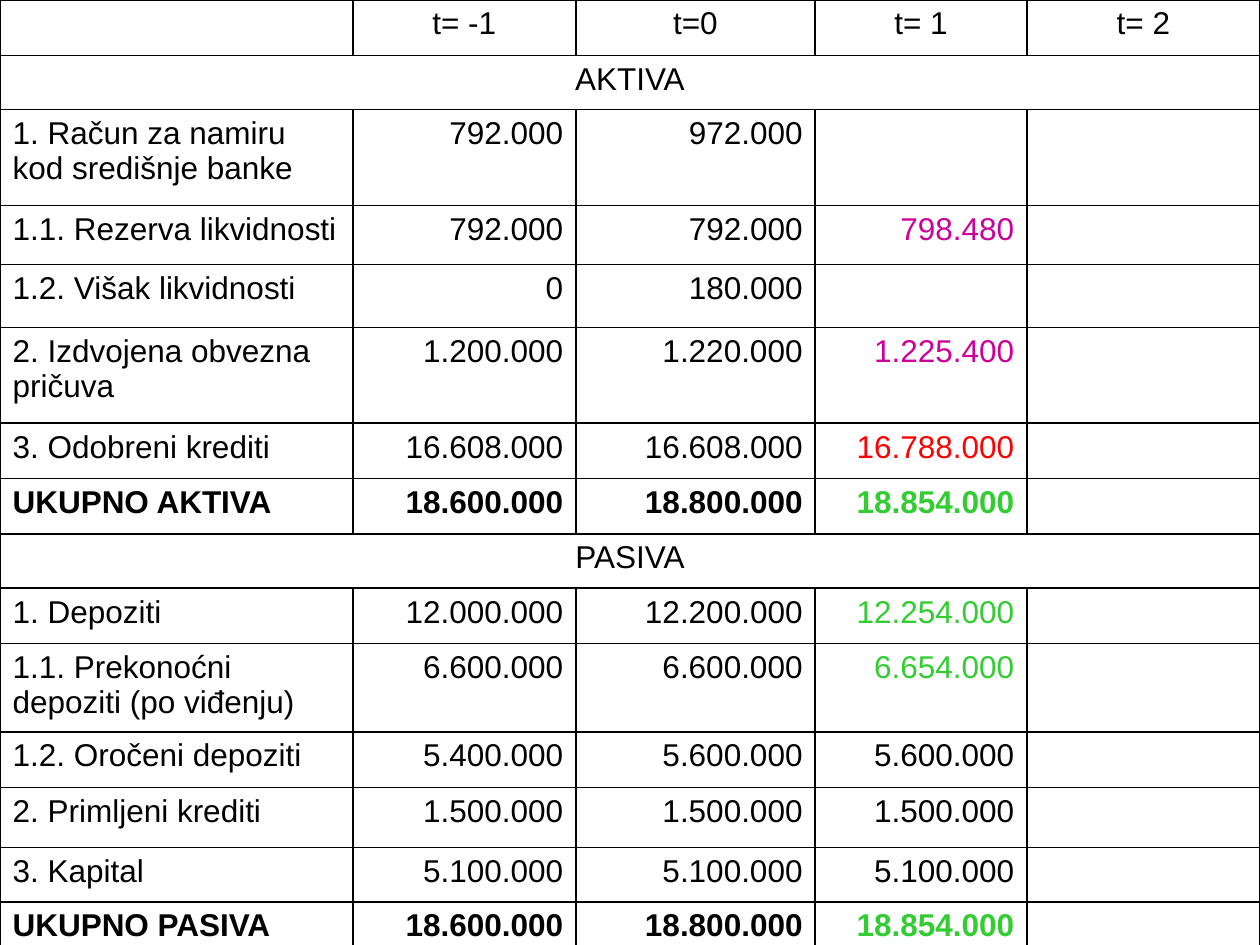
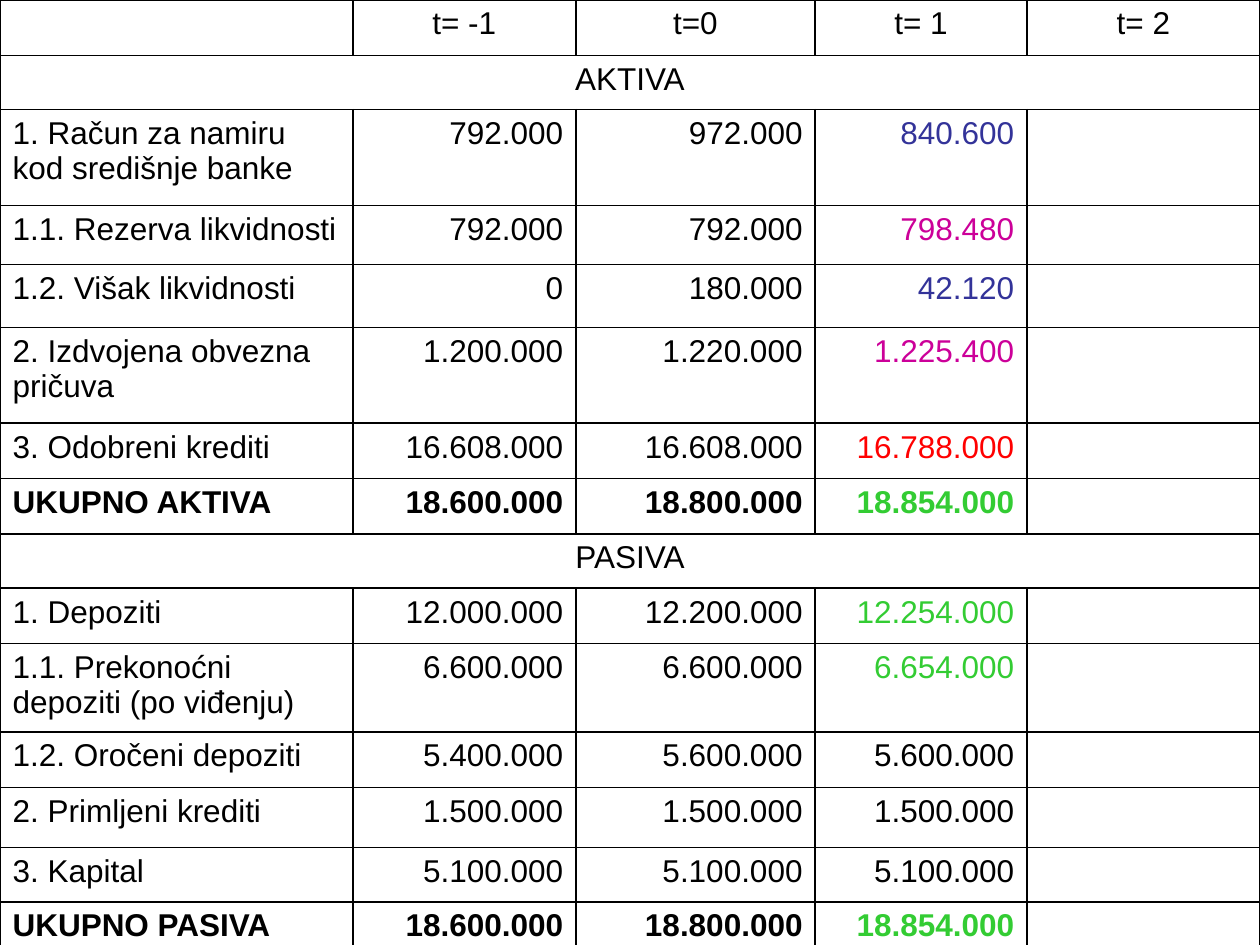
import lxml.etree
import pptx
import pptx.dml.color
import pptx.enum.text
import pptx.oxml.ns
import pptx.util

COLORS = {
    "ink": "000000",
    "reserve": "CC0099",
    "credit": "FF0000",
    "deposit": "33CC33",
    "liquidity": "333399",
}
ALIGN = pptx.enum.text.PP_ALIGN
GRID_COLUMNS, GRID_ROWS = 1000, 750
PERIOD_WIDTHS = [280, 177, 190, 168, 185]
LINE = 44

PERIODS = ["", "t= -1", "t=0", "t= 1", "t= 2"]
ACCOUNT = "1. Račun za namiru kod središnje banke"
SURPLUS = "1.2. Višak likvidnosti"
ASSETS = [
    (ACCOUNT, 76, "792.000", "972.000", "", "liquidity"),
    ("1.1. Rezerva likvidnosti", 47, "792.000", "792.000", "798.480", "reserve"),
    (SURPLUS, 50, "0", "180.000", "", "liquidity"),
    ("2. Izdvojena obvezna pričuva", 76, "1.200.000", "1.220.000", "1.225.400", "reserve"),
    ("3. Odobreni krediti", LINE, "16.608.000", "16.608.000", "16.788.000", "credit"),
    ("UKUPNO AKTIVA", LINE, "18.600.000", "18.800.000", "18.854.000", "deposit"),
]
LIABILITIES = [
    ("1. Depoziti", LINE, "12.000.000", "12.200.000", "12.254.000", "deposit"),
    ("1.1. Prekonoćni depoziti (po viđenju)", 70, "6.600.000", "6.600.000", "6.654.000", "deposit"),
    ("1.2. Oročeni depoziti", LINE, "5.400.000", "5.600.000", "5.600.000", "ink"),
    ("2. Primljeni krediti", 48, "1.500.000", "1.500.000", "1.500.000", "ink"),
    ("3. Kapital", 43, "5.100.000", "5.100.000", "5.100.000", "ink"),
    ("UKUPNO PASIVA", LINE, "18.600.000", "18.800.000", "18.854.000", "deposit"),
]
JUSTIFIED = {"3. Kapital", "UKUPNO PASIVA"}
SECTIONS = [("AKTIVA", ASSETS), ("PASIVA", LIABILITIES)]
SOLVED_BALANCES = [{}, {ACCOUNT: "840.600", SURPLUS: "42.120"}]


class BalanceDeck:
    font_name = "Arial"
    font_size = pptx.util.Pt(18)
    border_width = pptx.util.Pt(1)

    def __init__(self):
        self.presentation = pptx.Presentation()
        self.presentation.slide_width = pptx.util.Inches(10)
        self.presentation.slide_height = pptx.util.Inches(7.5)
        self.slide = None

    def x(self, columns):
        return round(self.presentation.slide_width * columns / GRID_COLUMNS)

    def y(self, rows):
        return round(self.presentation.slide_height * rows / GRID_ROWS)

    def new_slide(self):
        blank = self.presentation.slide_layouts[6]
        self.slide = self.presentation.slides.add_slide(blank)

    def grid_table(self, widths, heights):
        frame = self.slide.shapes.add_table(
            len(heights), len(widths), 0, 0, self.x(sum(widths)), self.y(sum(heights)))
        table = frame.table
        table.first_row = table.horz_banding = False
        for column, width in zip(table.columns, widths):
            column.width = self.x(width)
        for row, height in zip(table.rows, heights):
            row.height = self.y(height)
        for cell in table.iter_cells():
            self.border(cell)
            cell.fill.background()
        return table

    def border(self, cell):
        qn = pptx.oxml.ns.qn
        properties = cell._tc.get_or_add_tcPr()
        for side in ("a:lnL", "a:lnR", "a:lnT", "a:lnB"):
            line = lxml.etree.SubElement(properties, qn(side), w=str(self.border_width))
            fill = lxml.etree.SubElement(line, qn("a:solidFill"))
            lxml.etree.SubElement(fill, qn("a:srgbClr"), val=COLORS["ink"])

    def cell_text(self, cell, text, align, color="ink", bold=False):
        if not text:
            return
        cell.text_frame.text = text
        paragraph = cell.text_frame.paragraphs[0]
        paragraph.alignment = align
        font = paragraph.runs[0].font
        font.name = self.font_name
        font.size = self.font_size
        font.bold = bold
        font.color.rgb = pptx.dml.color.RGBColor.from_string(COLORS[color])

    def section_heading(self, table, row, title):
        table.cell(row, 0).merge(table.cell(row, len(PERIODS) - 1))
        self.cell_text(table.cell(row, 0), title, ALIGN.CENTER)

    def account_row(self, table, row, account, solved):
        label, _, before, start, after, accent = account
        bold = label.startswith("UKUPNO")
        label_align = ALIGN.JUSTIFY if label in JUSTIFIED else ALIGN.LEFT
        self.cell_text(table.cell(row, 0), label, label_align, bold=bold)
        amounts = [(before, "ink"), (start, "ink"), (solved.get(label, after), accent)]
        for column, (amount, color) in enumerate(amounts, 1):
            self.cell_text(table.cell(row, column), amount, ALIGN.RIGHT, color, bold)

    def balance_sheet(self, solved):
        heights = [LINE]
        for _, accounts in SECTIONS:
            heights += [43] + [account[1] for account in accounts]
        table = self.grid_table(PERIOD_WIDTHS, heights)
        for column, period in enumerate(PERIODS):
            self.cell_text(table.cell(0, column), period, ALIGN.CENTER)
        row = 1
        for title, accounts in SECTIONS:
            self.section_heading(table, row, title)
            for row, account in enumerate(accounts, row + 1):
                self.account_row(table, row, account, solved)
            row += 1


def main():
    deck = BalanceDeck()
    for solved in SOLVED_BALANCES:
        deck.new_slide()
        deck.balance_sheet(solved)
    deck.presentation.save("out.pptx")


if __name__ == "__main__":
    main()
